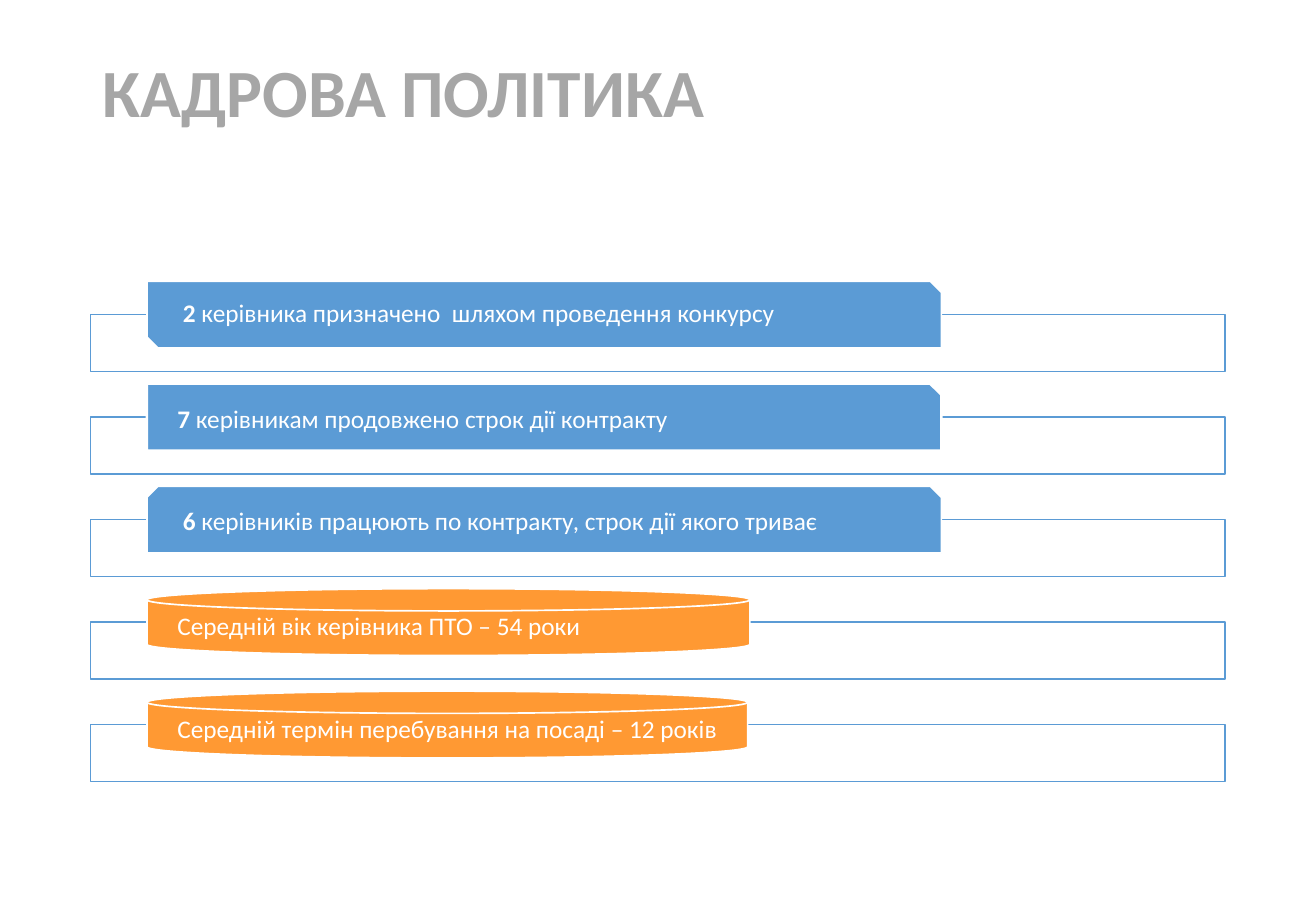
"""Build the staffing policy slide: five labelled bars, each over an outlined frame."""
import pptx
import pptx.dml.color
import pptx.enum.shapes
import pptx.enum.text
import pptx.util

Pt = pptx.util.Pt
SHAPE = pptx.enum.shapes.MSO_SHAPE
ANCHOR = pptx.enum.text.MSO_ANCHOR
ALIGN = pptx.enum.text.PP_ALIGN

COLORS = {"blue": "5B9BD5", "orange": "FF9933", "white": "FFFFFF", "heading": "A6A6A6"}
HEADING = "КАДРОВА ПОЛІТИКА\v"
FACTS = [
    ("2", " керівника призначено  шляхом проведення конкурсу",
     SHAPE.SNIP_2_DIAG_RECTANGLE, "blue", 470.9, 1),
    ("7", " керівникам продовжено строк дії контракту",
     SHAPE.SNIP_1_RECTANGLE, "blue", 470.9, 1.5),
    ("6", " керівників працюють по контракту, строк дії якого триває",
     SHAPE.SNIP_2_SAME_RECTANGLE, "blue", 470.9, 1),
    ("", "Середній вік керівника ПТО – 54 роки",
     SHAPE.FLOWCHART_MAGNETIC_DISK, "orange", 357.4, 1),
    ("", "Середній термін перебування на посаді – 12 років",
     SHAPE.FLOWCHART_MAGNETIC_DISK, "orange", 356, 1),
]
FRAME_LEFT, FRAME_TOP, FRAME_WIDTH, FRAME_HEIGHT = 53.6, 186.5, 672.5, 33.8
LABEL_LEFT, LABEL_TOP, LABEL_HEIGHT = 87.1, 166.7, 39.6
LABEL_INSET_LEFT, LABEL_INSET_RIGHT = 18, 8
ROW_STEP = 60.75


def rgb(name):
    """Return the named colour."""
    return pptx.dml.color.RGBColor.from_string(COLORS[name])


def add_box(slide, kind, box, fill, line, weight):
    """Add a filled, outlined shape; the box is in points."""
    shape = slide.shapes.add_shape(kind, *map(Pt, box))
    shape.shadow.inherit = False
    shape.fill.solid()
    shape.fill.fore_color.rgb = rgb(fill)
    shape.line.color.rgb = rgb(line)
    shape.line.width = Pt(weight)
    return shape


def style(paragraph, size, color):
    """Apply the shared paragraph look."""
    paragraph.alignment = ALIGN.LEFT
    paragraph.line_spacing = 0.9
    paragraph.font.name = "Calibri"
    paragraph.font.size = Pt(size)
    paragraph.font.color.rgb = rgb(color)


def add_label(slide, top, fact):
    """Add one bar with its bold number and wording."""
    number, wording, kind, fill, width, weight = fact
    label = add_box(slide, kind, (LABEL_LEFT, top, width, LABEL_HEIGHT), fill, "white", weight)
    frame = label.text_frame
    frame.word_wrap = True
    frame.vertical_anchor = ANCHOR.MIDDLE
    frame.margin_left = Pt(LABEL_INSET_LEFT)
    frame.margin_right = Pt(LABEL_INSET_RIGHT)
    frame.margin_top = frame.margin_bottom = 0
    paragraph = frame.paragraphs[0]
    style(paragraph, 15, "white")
    if number:
        count = paragraph.add_run()
        count.text = number
        count.font.bold = True
    paragraph.add_run().text = wording


def main():
    """Compose and save the slide."""
    deck = pptx.Presentation()
    deck.slide_width, deck.slide_height = Pt(780), Pt(540)
    slide = deck.slides.add_slide(deck.slide_layouts[5])

    heading = slide.shapes.title
    heading.left, heading.top, heading.width, heading.height = map(Pt, (53.6, 28.5, 672.5, 104.4))
    heading.text_frame.text = HEADING
    heading.text_frame.auto_size = pptx.enum.text.MSO_AUTO_SIZE.NONE
    heading.text_frame.vertical_anchor = ANCHOR.MIDDLE
    style(heading.text_frame.paragraphs[0], 40, "heading")
    heading.text_frame.paragraphs[0].font.bold = True

    for row, fact in enumerate(FACTS):
        offset = row * ROW_STEP
        add_box(slide, SHAPE.RECTANGLE,
                (FRAME_LEFT, FRAME_TOP + offset, FRAME_WIDTH, FRAME_HEIGHT), "white", "blue", 1)
        add_label(slide, LABEL_TOP + offset, fact)

    deck.save("out.pptx")


if __name__ == "__main__":
    main()
